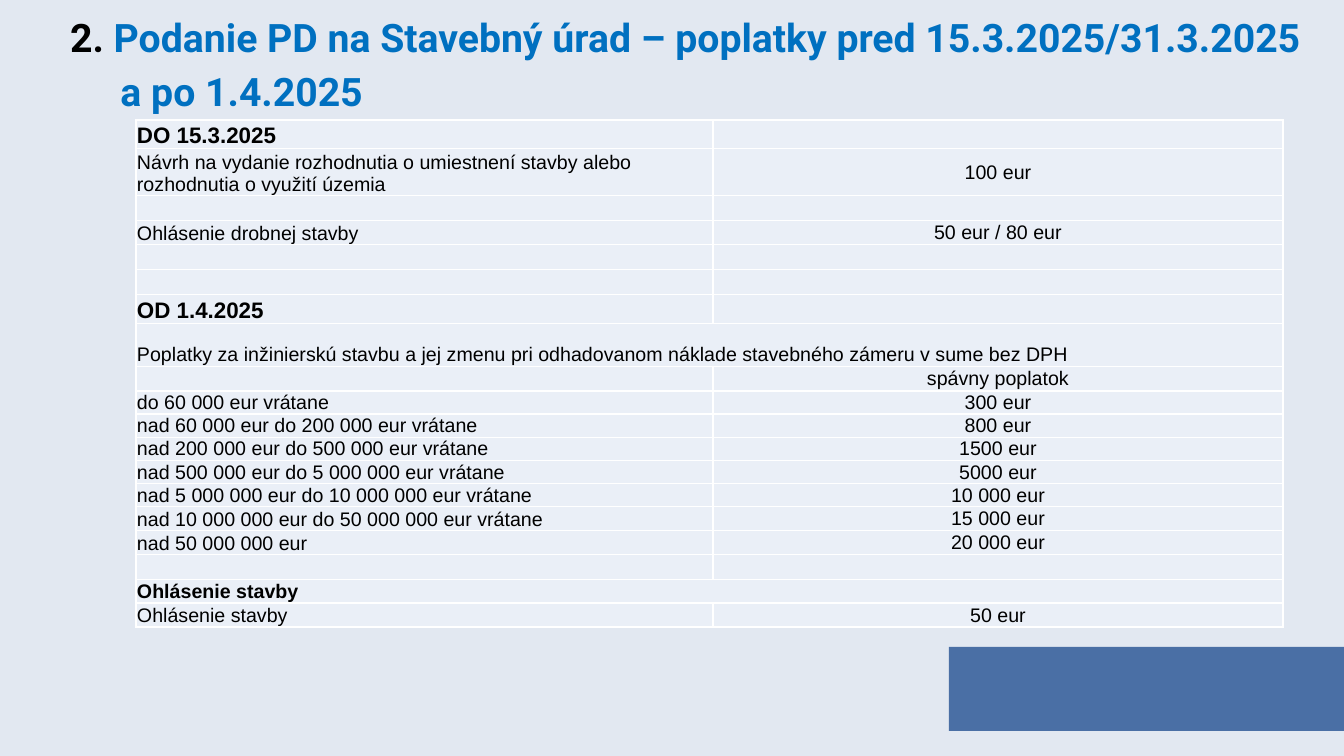
from lxml.etree import SubElement as Sub
from pptx import Presentation
from pptx.dml.color import RGBColor
from pptx.enum.shapes import MSO_SHAPE as Shape
from pptx.enum.text import MSO_ANCHOR as Anchor, MSO_AUTO_SIZE as Fit, PP_ALIGN as Align
from pptx.oxml.ns import qn
from pptx.util import Pt

PX = 914400 / 100.8


def paint(fill, color):
    fill.solid()
    fill.fore_color.rgb = RGBColor.from_string(color)


def write(para, text, font="Arial", size=14, bold=False, color="000000", align=Align.LEFT):
    para.alignment = align
    if not text:
        Sub(para._p, qn("a:endParaRPr"), sz=str(size * 100))
        return
    run = para.add_run()
    run.text = text
    run.font.name = font
    run.font.size = Pt(size)
    run.font.bold = bold
    run.font.color.rgb = RGBColor.from_string(color)


deck = Presentation()
deck.slide_width, deck.slide_height = round(1344 * PX), round(756 * PX)
slide = deck.slides.add_slide(deck.slide_layouts[5])
paint(slide.background.fill, "E2E8F1")

bar = slide.shapes.add_shape(Shape.RECTANGLE, *[round(n * PX) for n in (949, 647, 395, 84)])
bar.shadow.inherit = False
paint(bar.fill, "4A6FA5")
bar.line.fill.background()

title = slide.shapes.title
title.left, title.top, title.width, title.height = [round(n * PX) for n in (60, 0, 1260, 120)]
frame = title.text_frame
frame.word_wrap = True
frame.auto_size = Fit.NONE
frame.vertical_anchor = Anchor.MIDDLE
head = frame.paragraphs[0]
head.line_spacing = 1.15
look = dict(font="Roboto", size=28, bold=True)
write(head, "2. ", **look)
write(head, "Podanie PD na Stavebný úrad – poplatky pred 15.3.2025/31.3.2025", color="0070C0", **look)
head.add_line_break()
write(head, "\ta po 1.4.2025", color="0070C0", **look)

rows = [
    (28, "DO 15.3.2025", ""),
    (47, "Návrh na vydanie rozhodnutia o umiestnení stavby alebo rozhodnutia o využití územia", "100 eur"),
    (25, "", ""),
    (24, "Ohlásenie drobnej stavby", "50 eur / 80 eur"),
    (25, "", ""),
    (24, "", ""),
    (29, "OD 1.4.2025", ""),
    (43, "Poplatky za inžinierskú stavbu a jej zmenu pri odhadovanom náklade stavebného zámeru v sume bez DPH", None),
    (23, "", "spávny poplatok"),
    (23, "do 60 000 eur vrátane", "300 eur"),
    (23, "nad 60 000 eur do 200 000 eur vrátane", "800 eur"),
    (23, "nad 200 000 eur do 500 000 eur vrátane", "1500 eur"),
    (23, "nad 500 000 eur do 5 000 000 eur vrátane", "5000 eur"),
    (23, "nad 5 000 000 eur do 10 000 000 eur vrátane", "10 000 eur"),
    (24, "nad 10 000 000 eur do 50 000 000 eur vrátane", "15 000 eur"),
    (24, "nad 50 000 000 eur", "20 000 eur"),
    (24, "", ""),
    (24, "Ohlásenie stavby", None),
    (24, "Ohlásenie stavby", "50 eur"),
]
styles = {0: dict(size=16, bold=True), 6: dict(size=16, bold=True), 17: dict(bold=True)}

high = sum(row[0] for row in rows)
place = [round(n * PX) for n in (136, 120, 1147, high)]
table = slide.shapes.add_table(len(rows), 2, *place).table
table.first_row = table.horz_banding = False
for col, wide in zip(table.columns, (577, 570)):
    col.width = round(wide * PX)

for r, (tall, label, fee) in enumerate(rows):
    table.rows[r].height = round(tall * PX)
    if fee is None:
        table.cell(r, 0).merge(table.cell(r, 1))
    for c, text in enumerate((label, fee)):
        cell = table.cell(r, c)
        cell.margin_left = cell.margin_right = cell.margin_top = round(PX)
        cell.margin_bottom = 0
        cell.vertical_anchor = Anchor.MIDDLE if c else Anchor.BOTTOM
        props = cell._tc.get_or_add_tcPr()
        for side in "LRTB":
            line = Sub(props, qn("a:ln" + side), w=str(Pt(1)))
            Sub(Sub(line, qn("a:solidFill")), qn("a:srgbClr"), val="FFFFFF")
        paint(cell.fill, "EAEFF7")
        write(cell.text_frame.paragraphs[0], text,
              align=Align.CENTER if c else Align.LEFT, **styles.get(r, {}))

deck.save("out.pptx")
